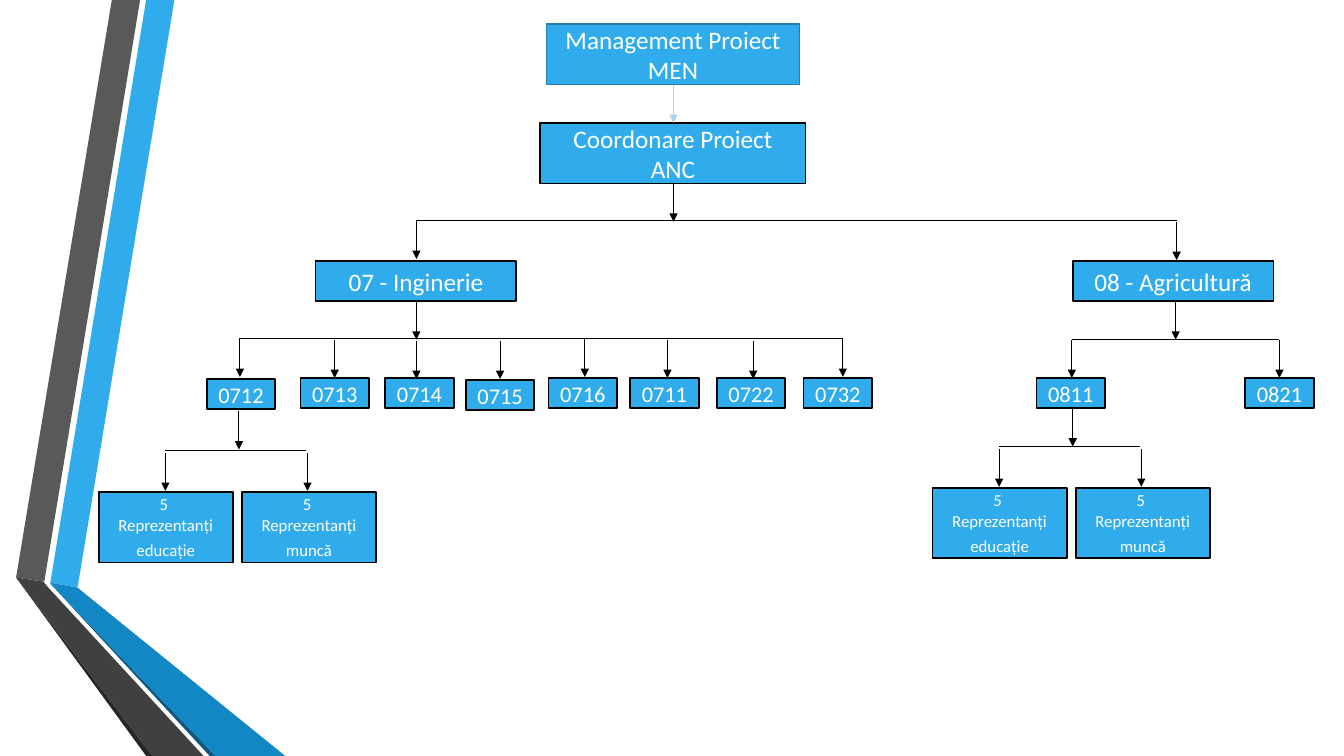
from dataclasses import dataclass

from lxml import etree
from pptx import Presentation
from pptx.dml.color import RGBColor
from pptx.enum.shapes import MSO_CONNECTOR, MSO_SHAPE
from pptx.enum.text import MSO_ANCHOR, PP_ALIGN
from pptx.oxml.ns import qn
from pptx.util import Inches, Pt

RECT = MSO_SHAPE.RECTANGLE
STRAIGHT = MSO_CONNECTOR.STRAIGHT
MIDDLE = MSO_ANCHOR.MIDDLE
CENTER = PP_ALIGN.CENTER

FONT = "Calibri"
BLUE = "30ACEC"
BLACK = "000000"
WHITE = "FFFFFF"
DROP = 0.38


@dataclass
class Band:
    color: str
    points: list[tuple[float, float]]


@dataclass
class Box:
    lines: list[str]
    left: float
    top: float
    width: float
    height: float
    size: int
    edge: str = BLACK
    gap: int = 0


@dataclass
class Wire:
    x1: float
    y1: float
    x2: float
    y2: float
    color: str = BLACK
    arrow: bool = True


def paint(target, color: str) -> None:
    target.solid()
    target.fore_color.rgb = RGBColor.from_string(color)


def draw_band(slide, band: Band) -> None:
    points = [(Inches(x), Inches(y)) for x, y in band.points]
    pen = slide.shapes.build_freeform(*points[0], scale=1.0)
    pen.add_line_segments(points[1:], close=True)
    shape = pen.convert_to_shape()
    shape.shadow.inherit = False
    paint(shape.fill, band.color)
    shape.line.fill.background()


def draw_box(slide, box: Box) -> None:
    place = [Inches(n) for n in (box.left, box.top, box.width, box.height)]
    shape = slide.shapes.add_shape(RECT, *place)
    shape.shadow.inherit = False
    paint(shape.fill, BLUE)
    paint(shape.line.fill, box.edge)
    shape.line.width = Pt(1.25)
    frame = shape.text_frame
    frame.word_wrap = True
    frame.vertical_anchor = MIDDLE
    for i, line in enumerate(box.lines):
        para = frame.add_paragraph() if i else frame.paragraphs[0]
        para.alignment = CENTER
        if i == 2:
            para.space_before = Pt(box.gap)
        run = para.add_run()
        run.text = line
        run.font.name = FONT
        run.font.size = Pt(box.size)
        paint(run.font.fill, WHITE)


def draw_wire(slide, wire: Wire) -> None:
    ends = [Inches(n) for n in (wire.x1, wire.y1, wire.x2, wire.y2)]
    link = slide.shapes.add_connector(STRAIGHT, *ends)
    paint(link.line.fill, wire.color)
    link.line.width = Pt(0.75)
    if wire.arrow:
        stroke = link.line.fill._xPr
        etree.SubElement(stroke, qn("a:tailEnd"), type="triangle")
    etree.SubElement(link._element.spPr, qn("a:effectLst"))


def drop(x: float, y: float, color: str = BLACK) -> Wire:
    return Wire(x, y, x, round(y + DROP, 2), color)


def bar(x1: float, x2: float, y: float) -> Wire:
    return Wire(x1, y, x2, y, arrow=False)


def code(text: str, left: float, top: float = 3.75) -> Box:
    return Box([text], left, top, 0.68, 0.3, 16)


def field(text: str, left: float) -> Box:
    return Box([text], left, 2.59, 1.99, 0.4, 18)


def panel(left: float, top: float) -> list[Box]:
    return [
        Box(["5 ", "Reprezentanți", name], left + i * 1.42, top, 1.33, 0.7, 12, gap=4)
        for i, name in enumerate(["educație", "muncă"])
    ]


def fork(x: float, y: float) -> list[Wire]:
    return [bar(x, x + 1.4, y), drop(x, y + 0.02), drop(x + 1.41, y + 0.02)]


BANDS = [
    Band(BLUE, [(0.5, 5.78), (0.77, 5.83), (1.73, 0), (1.45, 0)]),
    Band("595959", [(1.39, 0), (1.11, 0), (0.16, 5.73), (0.44, 5.77)]),
    Band("262626", [(0.16, 5.73), (1.45, 7.5), (1.51, 7.5)]),
    Band("0C5A82", [(0.5, 5.79), (2.08, 7.5), (2.14, 7.5)]),
    Band("1287C3", [(0.5, 5.79), (2.14, 7.5), (2.83, 7.5), (0.77, 5.83), (0.5, 5.78)]),
    Band("404040", [(2.02, 7.5), (0.48, 5.83), (0.43, 5.77), (0.16, 5.73), (1.51, 7.5)]),
]

BOXES = [
    Box(["Management Proiect MEN"], 5.42, 0.24, 2.51, 0.6, 18, "247FAF"),
    Box(["Coordonare Proiect ANC"], 5.36, 1.22, 2.63, 0.6, 18),
    field("07 - Inginerie", 3.13),
    field("08 - Agricultură", 10.64),
    code("0712", 2.05, 3.76),
    code("0713", 2.98),
    code("0714", 3.82),
    code("0715", 4.62, 3.77),
    code("0716", 5.44),
    code("0711", 6.25),
    code("0722", 7.11),
    code("0732", 7.97),
    code("0811", 10.28),
    code("0821", 12.35),
    *panel(0.98, 4.88),
    *panel(9.25, 4.84),
]

DROPS = [
    (6.68, 1.82), (4.13, 2.19), (11.67, 2.2), (4.13, 2.99), (11.66, 2.99),
    (2.38, 3.36), (3.32, 3.37), (4.13, 3.38), (4.96, 3.38), (5.8, 3.36),
    (6.62, 3.37), (7.47, 3.38), (8.36, 3.36), (10.63, 3.37), (12.69, 3.37),
    (2.37, 4.08), (10.64, 4.05),
]

WIRES = [
    drop(6.68, 0.84, "AED2F4"),
    bar(4.13, 11.67, 2.19),
    bar(2.37, 8.36, 3.36),
    bar(10.63, 12.69, 3.37),
    *[drop(x, y) for x, y in DROPS],
    *fork(1.64, 4.47),
    *fork(9.91, 4.43),
]


def main() -> None:
    deck = Presentation()
    deck.slide_width = Inches(13.33)
    deck.slide_height = Inches(7.5)
    slide = deck.slides.add_slide(deck.slide_layouts[6])
    paint(slide.background.fill, WHITE)
    for band in BANDS:
        draw_band(slide, band)
    for box in BOXES:
        draw_box(slide, box)
    for wire in WIRES:
        draw_wire(slide, wire)
    deck.save("out.pptx")


if __name__ == "__main__":
    main()
